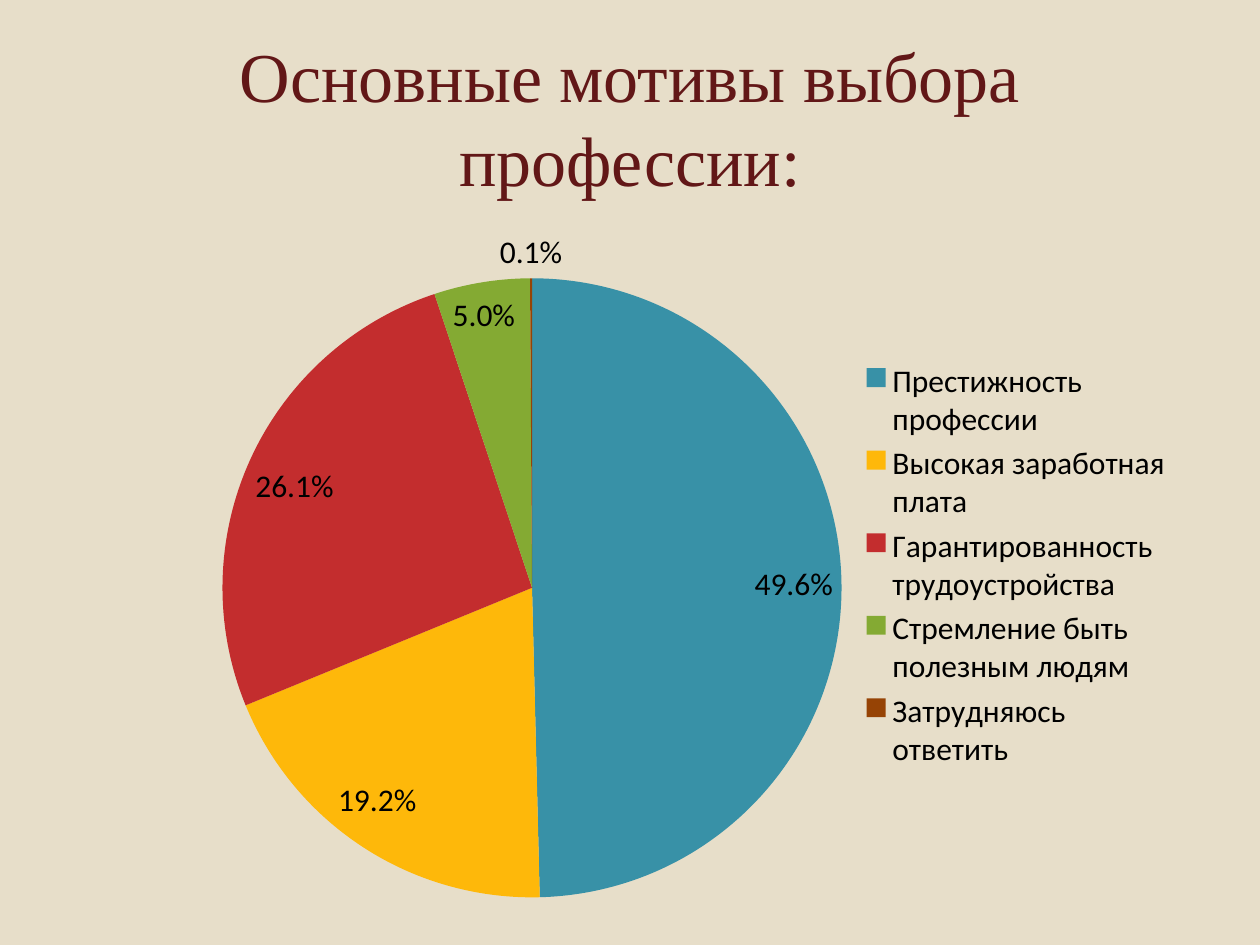
from lxml import etree
from pptx import Presentation
from pptx.chart.data import CategoryChartData
from pptx.dml.color import RGBColor
from pptx.enum.chart import XL_CHART_TYPE, XL_LABEL_POSITION, XL_LEGEND_POSITION
from pptx.enum.text import MSO_ANCHOR, PP_ALIGN
from pptx.oxml.ns import qn
from pptx.util import Inches, Pt

PIE = XL_CHART_TYPE.PIE
BEST_FIT = XL_LABEL_POSITION.BEST_FIT
RIGHT = XL_LEGEND_POSITION.RIGHT
MIDDLE = MSO_ANCHOR.MIDDLE
CENTER = PP_ALIGN.CENTER

SAND = RGBColor(0xE7, 0xDE, 0xC9)
MAROON = RGBColor(0x62, 0x17, 0x17)
BLACK = RGBColor(0, 0, 0)
TEAL = RGBColor(0x38, 0x91, 0xA7)
YELLOW = RGBColor(0xFE, 0xB8, 0x0A)
RED = RGBColor(0xC3, 0x2D, 0x2E)
GREEN = RGBColor(0x84, 0xAA, 0x33)
BROWN = RGBColor(0x96, 0x43, 0x05)

MOTIVES = [
    ("Престижность профессии", 49.6, TEAL),
    ("Высокая заработная плата", 19.2, YELLOW),
    ("Гарантированность трудоустройства", 26.1, RED),
    ("Стремление быть полезным людям", 5, GREEN),
    ("Затрудняюсь ответить", 0.1, BROWN),
]
TITLE_BOX = [Inches(n) for n in (0.5, 0.3, 9, 1.25)]
CHART_BOX = [Inches(n) for n in (1.61, 1.47, 7.8, 6.03)]
PIE_SHARES = {"x": 0.02, "y": 0.12, "w": 0.63, "h": 0.82}


def style_font(font, name, size, color):
    font.name = name
    font.size = Pt(size)
    font.color.rgb = color


def place_title(page, box):
    title = page.shapes.title
    title.left, title.top, title.width, title.height = box
    frame = title.text_frame
    frame.text = "Основные мотивы выбора профессии:"
    frame.word_wrap = True
    frame.vertical_anchor = MIDDLE
    para = frame.paragraphs[0]
    para.alignment = CENTER
    style_font(para.runs[0].font, "Times New Roman", 40, MAROON)


def set_plot_layout(chart, shares):
    area = chart.plots[0]._element.getparent()
    for old in area.findall(qn("c:layout")):
        area.remove(old)
    layout = etree.Element(qn("c:layout"))
    area.insert(0, layout)
    manual = etree.SubElement(layout, qn("c:manualLayout"))
    settings = {"layoutTarget": "inner", "xMode": "edge", "yMode": "edge", **shares}
    for name, value in settings.items():
        etree.SubElement(manual, qn("c:" + name)).set("val", str(value))


def place_chart(page, box):
    names, values, colors = zip(*MOTIVES)
    data = CategoryChartData()
    data.categories = names
    data.add_series("Series 1", values)
    chart = page.shapes.add_chart(PIE, *box, data).chart
    chart.has_title = False
    style_font(chart.font, "Calibri", 18, BLACK)
    set_plot_layout(chart, PIE_SHARES)

    chart.has_legend = True
    chart.legend.position = RIGHT
    chart.legend.include_in_layout = False
    style_font(chart.legend.font, "Calibri", 18, BLACK)

    plot = chart.plots[0]
    plot.vary_by_categories = True
    for index, color in enumerate(colors):
        fill = plot.series[0].points[index].format.fill
        fill.solid()
        fill.fore_color.rgb = color

    plot.has_data_labels = True
    labels = plot.data_labels
    labels.show_percentage = True
    labels.show_value = False
    labels.number_format = "0.0%"
    labels.number_format_is_linked = False
    labels.position = BEST_FIT
    style_font(labels.font, "Calibri", 18, BLACK)


def main():
    deck = Presentation()
    deck.slide_width = Inches(10)
    deck.slide_height = Inches(7.5)
    page = deck.slides.add_slide(deck.slide_layouts[5])
    page.background.fill.solid()
    page.background.fill.fore_color.rgb = SAND
    place_title(page, TITLE_BOX)
    place_chart(page, CHART_BOX)
    deck.save("out.pptx")


if __name__ == "__main__":
    main()
